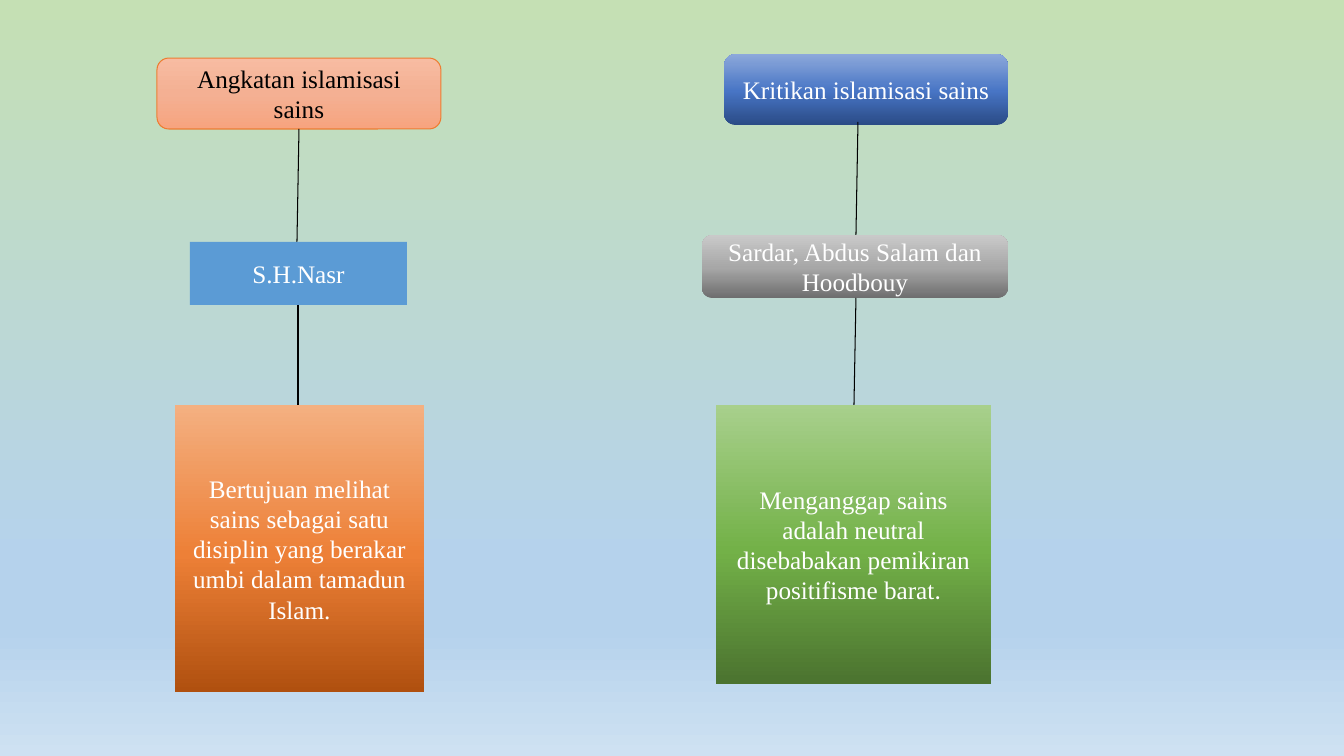
import pptx
import pptx.dml.color
import pptx.enum.shapes
import pptx.enum.text
import pptx.oxml.xmlchemy
import pptx.util
from lxml import etree
from pptx.oxml.ns import qn

RGBColor = pptx.dml.color.RGBColor
RECTANGLE = pptx.enum.shapes.MSO_SHAPE.RECTANGLE
ROUNDED = pptx.enum.shapes.MSO_SHAPE.ROUNDED_RECTANGLE

EMU_PER_PX = 914400 / 100.8
DOWN, UP = 270, 90
BLACK = RGBColor(0x00, 0x00, 0x00)
WHITE = RGBColor(0xFF, 0xFF, 0xFF)
BLUE = RGBColor(0x5B, 0x9B, 0xD5)
ORANGE = RGBColor(0xED, 0x7D, 0x31)
SKY = RGBColor(0xB5, 0xD2, 0xEC)

BACKGROUND_STOPS = [(0, RGBColor(0xC5, 0xE0, 0xB4)), (74, SKY), (83, SKY),
                    (100, RGBColor(0xCE, 0xE1, 0xF2))]
PEACH_STOPS = [(0, RGBColor(0xF7, 0xBC, 0xA2)), (50, RGBColor(0xF4, 0xB0, 0x93)),
               (100, RGBColor(0xF7, 0xA4, 0x7F))]
ORANGE_STOPS = [(0, RGBColor(0xB0, 0x50, 0x0F)), (48, RGBColor(0xED, 0x80, 0x37)),
                (100, RGBColor(0xF4, 0xB0, 0x81))]
NAVY_STOPS = [(0, RGBColor(0x2A, 0x4B, 0x86)), (48, RGBColor(0x48, 0x75, 0xC5)),
              (100, RGBColor(0x8D, 0xA9, 0xDB))]
GRAY_STOPS = [(0, RGBColor(0x6E, 0x6E, 0x6E)), (48, RGBColor(0xA7, 0xA7, 0xA7)),
              (100, RGBColor(0xC9, 0xC9, 0xC9))]
GREEN_STOPS = [(0, RGBColor(0x4B, 0x73, 0x2F)), (48, RGBColor(0x73, 0xB1, 0x48)),
               (100, RGBColor(0xA8, 0xD0, 0x8C))]


def px(*lengths):
    return [pptx.util.Emu(round(length * EMU_PER_PX)) for length in lengths]


def fill_gradient(owner, fill, stops, angle):
    fill.gradient()
    fill.gradient_angle = angle
    stop_list = owner.element.xpath(".//a:gsLst")[0]
    for stop in list(stop_list):
        stop_list.remove(stop)
    for position, color in stops:
        stop = etree.SubElement(stop_list, qn("a:gs"), pos=str(position * 1000))
        etree.SubElement(stop, qn("a:srgbClr"), val=str(color))


def format_run(run, color, font="Times New Roman"):
    run.font.name = font
    run.font.size = pptx.util.Pt(18)
    run.font.color.rgb = color


def add_box(slide, kind, bounds, text, color=WHITE):
    shape = slide.shapes.add_shape(kind, *px(*bounds))
    shape.shadow.inherit = False
    shape.line.fill.background()
    frame = shape.text_frame
    frame.word_wrap = True
    frame.vertical_anchor = pptx.enum.text.MSO_ANCHOR.MIDDLE
    frame.text = text
    paragraph = frame.paragraphs[0]
    paragraph.alignment = pptx.enum.text.PP_ALIGN.CENTER
    format_run(paragraph.runs[0], color)
    return shape


def add_gradient_box(slide, kind, bounds, text, stops, angle=UP, color=WHITE):
    shape = add_box(slide, kind, bounds, text, color)
    fill_gradient(shape, shape.fill, stops, angle)
    return shape


def add_link(slide, *ends):
    connector = slide.shapes.add_connector(
        pptx.enum.shapes.MSO_CONNECTOR.STRAIGHT, *px(*ends))
    connector.line.color.rgb = BLACK
    connector.line.width = pptx.util.Pt(0.75)
    etree.SubElement(connector.element.spPr, qn("a:effectLst"))


def add_supporters(slide):
    heading = add_gradient_box(slide, ROUNDED, (157, 58, 284, 71),
                               "Angkatan islamisasi sains", PEACH_STOPS, DOWN, BLACK)
    heading.line.color.rgb = ORANGE
    heading.line.width = pptx.util.Pt(0.75)
    add_link(slide, 299, 129, 297, 242)
    scholar = add_box(slide, RECTANGLE, (190, 242, 217, 63), "S.H.Nasr")
    scholar.fill.solid()
    scholar.fill.fore_color.rgb = BLUE
    add_link(slide, 298, 305, 298, 405)
    add_gradient_box(slide, RECTANGLE, (175, 405, 249, 287),
                     "Bertujuan melihat sains sebagai satu disiplin yang berakar "
                     "umbi dalam tamadun Islam.", ORANGE_STOPS)


def add_critics(slide):
    add_gradient_box(slide, ROUNDED, (724, 54, 284, 71),
                     "Kritikan islamisasi sains", NAVY_STOPS)
    add_link(slide, 858, 122, 856, 235)
    add_gradient_box(slide, ROUNDED, (702, 235, 306, 63),
                     "Sardar, Abdus Salam dan Hoodbouy", GRAY_STOPS)
    add_link(slide, 856, 298, 854, 405)
    view = add_gradient_box(slide, RECTANGLE, (716, 405, 275, 279),
                            "Menganggap sains adalah neutral disebabakan pemikiran "
                            "positifisme barat", GREEN_STOPS)
    full_stop = view.text_frame.paragraphs[0].add_run()
    full_stop.text = "."
    format_run(full_stop, WHITE, "Calibri")


def main():
    presentation = pptx.Presentation()
    presentation.slide_width, presentation.slide_height = px(1344, 756)
    slide = presentation.slides.add_slide(presentation.slide_layouts[6])
    fill_gradient(slide, slide.background.fill, BACKGROUND_STOPS, DOWN)
    add_supporters(slide)
    add_critics(slide)
    presentation.save("out.pptx")


if __name__ == "__main__":
    main()
